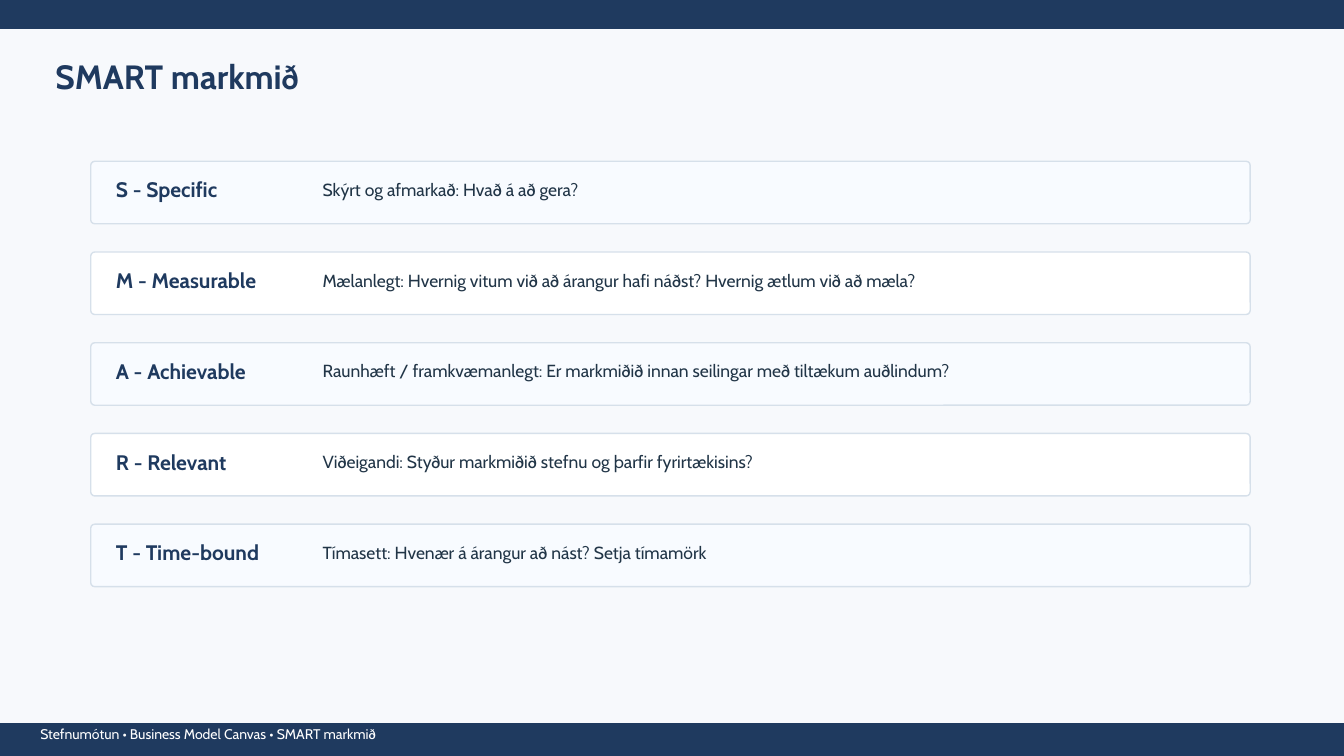
from dataclasses import dataclass

from pptx import Presentation
from pptx.dml.color import RGBColor
from pptx.enum.shapes import MSO_SHAPE as Preset
from pptx.enum.text import MSO_ANCHOR as Anchor
from pptx.slide import Slide
from pptx.util import Inches, Pt

FONT = "Cabin"
NAVY = "1F3A5F"
INK = "213547"
WHITE = "FFFFFF"
ICE = "F8FBFF"
BORDER = "D6E0EA"
BACKGROUND = "F7F9FC"

PAGE_WIDTH = 13.33
FIRST_ROW_TOP = 1.6
ROW_STEP = 0.9
TEXT_OFFSET = 0.18


@dataclass(frozen=True)
class Area:
    left: float
    top: float
    width: float
    height: float

    def lengths(self) -> tuple[int, int, int, int]:
        return (Inches(self.left), Inches(self.top),
                Inches(self.width), Inches(self.height))


@dataclass(frozen=True)
class TextStyle:
    size: float
    color: str
    bold: bool = False


@dataclass(frozen=True)
class Goal:
    name: str
    question: str


TITLE_STYLE = TextStyle(24, NAVY, True)
NAME_STYLE = TextStyle(15, NAVY, True)
QUESTION_STYLE = TextStyle(12.5, INK)
FOOTER_STYLE = TextStyle(10, WHITE)

BANDS = [Area(0, 0, PAGE_WIDTH, 0.28), Area(0, 7.18, PAGE_WIDTH, 0.32)]

GOALS = [
    Goal("S - Specific", "Skýrt og afmarkað: Hvað á að gera?"),
    Goal("M - Measurable",
         "Mælanlegt: Hvernig vitum við að árangur hafi náðst? Hvernig ætlum við að mæla?"),
    Goal("A - Achievable",
         "Raunhæft / framkvæmanlegt: Er markmiðið innan seilingar með tiltækum auðlindum?"),
    Goal("R - Relevant", "Viðeigandi: Styður markmiðið stefnu og þarfir fyrirtækisins?"),
    Goal("T - Time-bound", "Tímasett: Hvenær á árangur að nást? Setja tímamörk"),
]


def color(value: str) -> RGBColor:
    return RGBColor.from_string(value)


def draw_panel(page: Slide, area: Area, fill: str, line: str, corner: float = 0) -> None:
    preset = Preset.ROUNDED_RECTANGLE if corner else Preset.RECTANGLE
    panel = page.shapes.add_shape(preset, *area.lengths())
    if corner:
        panel.adjustments[0] = corner
    panel.shadow.inherit = False
    panel.fill.solid()
    panel.fill.fore_color.rgb = color(fill)
    panel.line.color.rgb = color(line)
    panel.line.width = Pt(1)


def draw_text(page: Slide, area: Area, text: str, style: TextStyle) -> None:
    frame = page.shapes.add_textbox(*area.lengths()).text_frame
    frame.word_wrap = True
    frame.vertical_anchor = Anchor.MIDDLE
    frame.margin_left = frame.margin_right = 0
    frame.margin_top = frame.margin_bottom = 0
    para = frame.paragraphs[0]
    span = para.add_run()
    span.text = text
    span.font.name = FONT
    span.font.size = Pt(style.size)
    span.font.bold = style.bold
    span.font.color.rgb = color(style.color)


def draw_goal(page: Slide, index: int, goal: Goal) -> None:
    top = FIRST_ROW_TOP + index * ROW_STEP
    fill = WHITE if index % 2 else ICE
    draw_panel(page, Area(0.9, top, 11.5, 0.62), fill, BORDER, 0.065)
    text_top = top + TEXT_OFFSET
    draw_text(page, Area(1.15, text_top, 2.2, 0.2), goal.name, NAME_STYLE)
    draw_text(page, Area(3.2, text_top, 8.6, 0.2), goal.question, QUESTION_STYLE)


def main() -> None:
    deck = Presentation()
    deck.slide_width = Inches(PAGE_WIDTH)
    deck.slide_height = Inches(7.5)
    page = deck.slides.add_slide(deck.slide_layouts[6])
    page.background.fill.solid()
    page.background.fill.fore_color.rgb = color(BACKGROUND)

    for band in BANDS:
        draw_panel(page, band, NAVY, NAVY)
    draw_text(page, Area(0.4, 7.2, 8.5, 0.16),
              "Stefnumótun • Business Model Canvas • SMART markmið", FOOTER_STYLE)
    draw_text(page, Area(0.55, 0.5, 8.8, 0.5), "SMART markmið", TITLE_STYLE)
    for index, goal in enumerate(GOALS):
        draw_goal(page, index, goal)

    deck.save("out.pptx")


if __name__ == "__main__":
    main()
